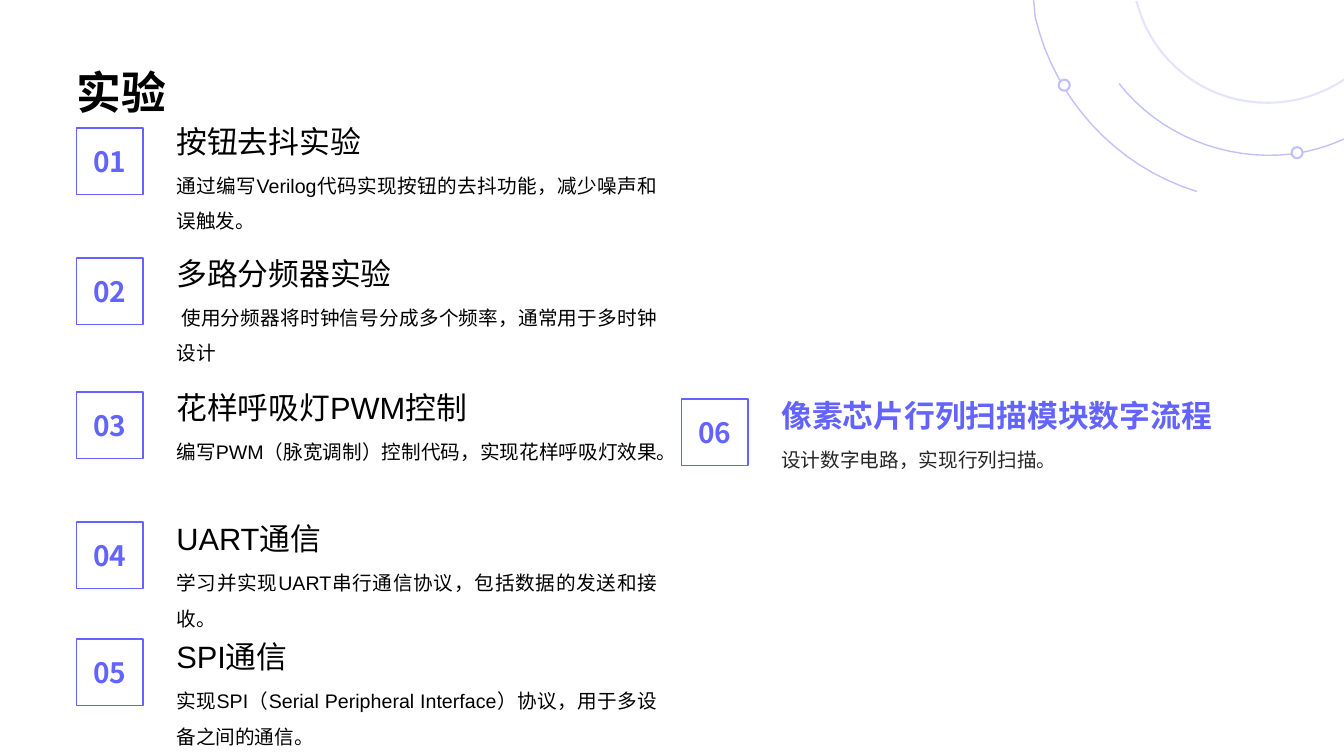
"""Build the experiments slide: six numbered topics beside a corner of arcs."""
from lxml import etree
from pptx import Presentation
from pptx import util as u
from pptx.dml.color import RGBColor
from pptx.enum import shapes, text
from pptx.oxml.ns import qn

EXPERIMENTS = [
    (0.76, 1.27, 1.20, "按钮去抖实验", "通过编写Verilog代码实现按钮的去抖功能，减少噪声和误触发。"),
    (0.76, 2.56, 2.51, "多路分频器实验", " 使用分频器将时钟信号分成多个频率，通常用于多时钟设计"),
    (0.76, 3.89, 3.84, "花样呼吸灯PWM控制", "编写PWM（脉宽调制）控制代码，实现花样呼吸灯效果。"),
    (0.76, 5.18, 5.14, "UART通信", "学习并实现UART串行通信协议，包括数据的发送和接收。"),
    (0.76, 6.34, 6.31, "SPI通信", "实现SPI（Serial Peripheral Interface）协议，用于多设备之间的通信。"),
    (6.76, 3.96, 3.92, "像素芯片行列扫描模块数字流程", "设计数字电路，实现行列扫描。"),
]
ARCS = [
    ([(13.33, 1.38), (13.26, 1.41), (13.11, 1.47), (12.96, 1.51), (12.8, 1.53),
      (12.15, 1.6), (11.5, 1.34), (11.1, 0.83)], 1, None),
    ([(11.87, 1.9), (11.87, 1.9), (11.06, 1.65), (10.46, 0.98), (10.27, 0.18),
      (10.26, 0.12), (10.26, 0.06), (10.25, 0)], 1, None),
    ([(13.33, 0.78), (13.33, 0.79), (13.12, 0.93), (12.86, 1.02), (12.57, 1.02),
      (12.01, 1.02), (11.53, 0.68), (11.33, 0.19), (11.31, 0.13), (11.29, 0.07),
      (11.27, 0.01)], 1.5, 42),
]
NODES = [(12.81, 1.46), (10.5, 0.79)]


def colour(hex_code):
    return RGBColor.from_string(hex_code)


def curve_points(start, controls, steps=16):
    points = [start]
    for i in range(0, len(controls), 3):
        a, (b, c, d) = points[-1], controls[i:i + 3]
        for step in range(1, steps + 1):
            t = step / steps
            s = 1 - t
            points.append(tuple(
                s**3 * p + 3 * s * s * t * q + 3 * s * t * t * r + t**3 * e
                for p, q, r, e in zip(a, b, c, d)))
    return points


class SlideBuilder:
    accent, pale, ink, soft_ink, white = "6364FF", "C1C1FF", "000000", "262626", "FFFFFF"
    latin, cjk = "Arial", "Noto Sans CJK SC"

    def __init__(self, slide):
        self.slide = slide

    def set_text(self, shape, words, size, ink, font, bold=False,
                 align=text.PP_ALIGN.JUSTIFY, anchor=text.MSO_ANCHOR.MIDDLE,
                 spacing=1.0, wrap=True):
        frame = shape.text_frame
        frame.margin_left = frame.margin_right = frame.margin_top = frame.margin_bottom = 0
        frame.auto_size = text.MSO_AUTO_SIZE.NONE
        frame.word_wrap = wrap
        frame.vertical_anchor = anchor
        paragraph = frame.paragraphs[0]
        paragraph.text = words
        paragraph.alignment = align
        paragraph.line_spacing = spacing
        style = paragraph.font
        style.size, style.bold, style.name = u.Pt(size), bold, font
        style.color.rgb = colour(ink)
        east_asian = etree.SubElement(paragraph._p.pPr.find(qn("a:defRPr")), qn("a:ea"))
        east_asian.set("typeface", self.cjk)

    def outline(self, shape, ink, width, fill=None):
        shape.shadow.inherit = False
        if fill:
            shape.fill.solid()
            shape.fill.fore_color.rgb = colour(fill)
        else:
            shape.fill.background()
        shape.line.color.rgb = colour(ink)
        shape.line.width = u.Pt(width)

    def title(self, words):
        heading = self.slide.shapes.title
        heading.left, heading.top = u.Inches(0.76), u.Inches(0.39)
        heading.width, heading.height = u.Inches(7.88), u.Inches(0.79)
        self.set_text(heading, words, 32, self.ink, self.latin, True,
                      text.PP_ALIGN.LEFT, text.MSO_ANCHOR.BOTTOM)

    def arc(self, controls, width, opacity):
        points = [(u.Inches(x), u.Inches(y))
                  for x, y in [controls[0]] + curve_points(controls[1], controls[2:])]
        builder = self.slide.shapes.build_freeform(*points[0])
        builder.add_line_segments(points[1:], close=False)
        arc = builder.convert_to_shape()
        self.outline(arc, self.pale, width)
        if opacity:
            tint = arc.line._ln.find(".//" + qn("a:srgbClr"))
            etree.SubElement(tint, qn("a:alpha")).set("val", str(opacity * 1000))

    def node(self, left, top):
        node = self.slide.shapes.add_shape(
            shapes.MSO_SHAPE.OVAL, u.Inches(left), u.Inches(top), u.Inches(0.11), u.Inches(0.11))
        self.outline(node, self.pale, 1.5, self.white)

    def label(self, left, top, height, words, size, ink, font, **layout):
        box = self.slide.shapes.add_textbox(
            u.Inches(left), u.Inches(top), u.Inches(4.77), u.Inches(height))
        self.set_text(box, words, size, ink, font, **layout)

    def number(self, left, top, digits):
        frame = self.slide.shapes.add_shape(
            shapes.MSO_SHAPE.RECTANGLE, u.Inches(left), u.Inches(top),
            u.Inches(0.66), u.Inches(0.66))
        self.outline(frame, self.accent, 1)
        self.set_text(frame, digits, 20, self.accent, self.cjk, True,
                      text.PP_ALIGN.CENTER, wrap=False)

    def experiment(self, index, left, number_top, name_top, name, summary, featured):
        font = self.cjk if featured else self.latin
        name_ink = self.accent if featured else self.ink
        summary_ink = self.soft_ink if featured else self.ink
        self.label(left + 0.99, name_top + 0.41, 0.72, summary, 14, summary_ink, font,
                   anchor=text.MSO_ANCHOR.TOP, spacing=1.5)
        self.label(left + 0.99, name_top, 0.4, name, 22, name_ink, font, bold=featured)
        self.number(left, number_top, f"{index:02d}")


def main():
    deck = Presentation()
    deck.slide_width, deck.slide_height = u.Inches(13.33), u.Inches(7.5)
    page = SlideBuilder(deck.slides.add_slide(deck.slide_layouts[5]))
    for arc in ARCS:
        page.arc(*arc)
    for node in NODES:
        page.node(*node)
    page.title("实验")
    for index, experiment in enumerate(EXPERIMENTS, 1):
        page.experiment(index, *experiment, featured=index == len(EXPERIMENTS))
    deck.save("out.pptx")


if __name__ == "__main__":
    main()
